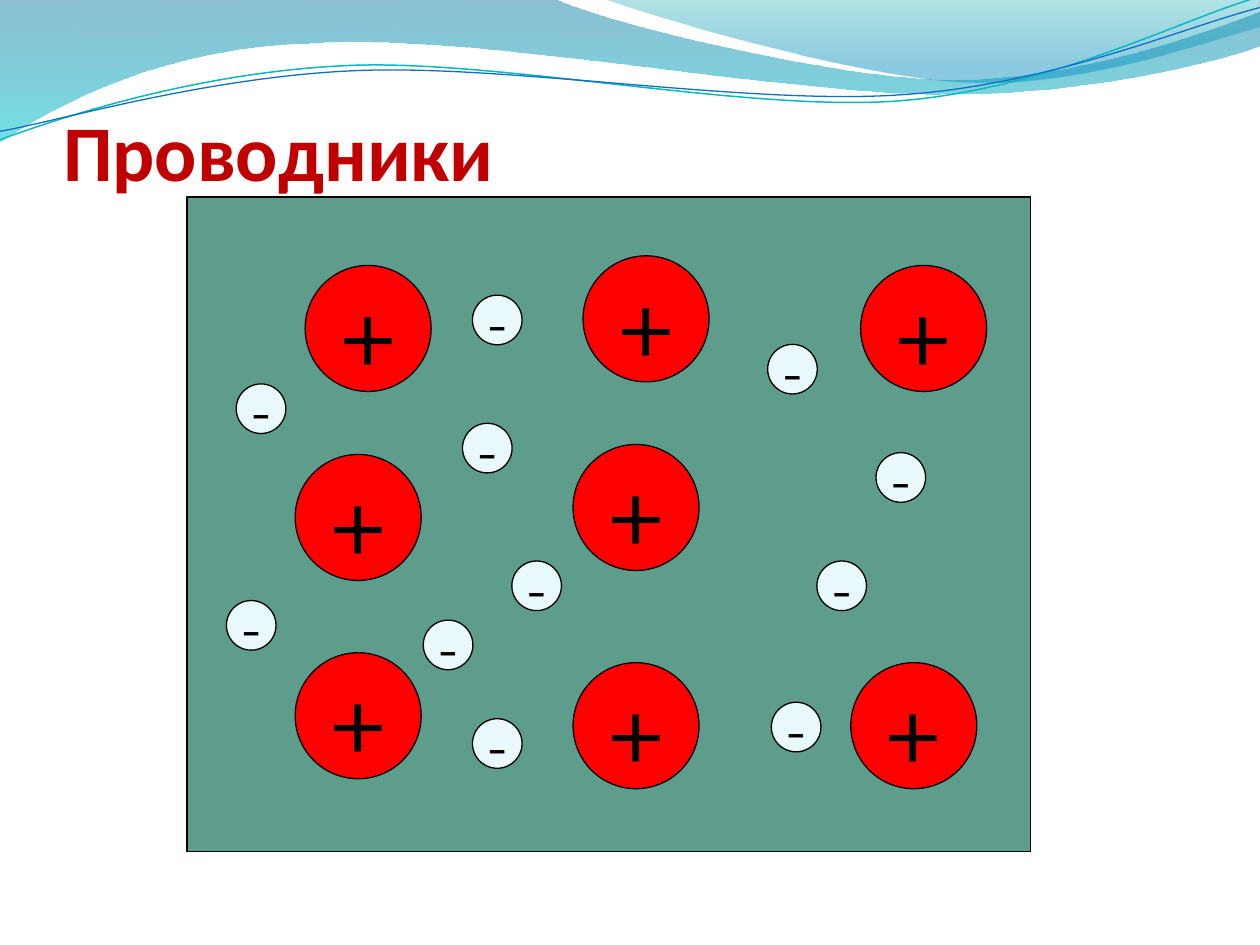
from lxml import etree
from pptx import Presentation
from pptx.dml.color import RGBColor
from pptx.enum import shapes, text
from pptx.oxml.ns import qn
from pptx.util import Pt

BLACK = RGBColor(0x00, 0x00, 0x00)
TITLE_RED = RGBColor(0xC0, 0x00, 0x00)
ION_RED = RGBColor(0xFF, 0x00, 0x00)
ELECTRON_PALE = RGBColor(0xE9, 0xF9, 0xFB)
METAL_GREEN = RGBColor(0x08, 0x68, 0x4E)
DEEP_BLUE = RGBColor(0x00, 0x74, 0xA1)
CYAN = RGBColor(0x00, 0xC6, 0xCF)
TEAL = RGBColor(0x00, 0xA1, 0xA9)
SKY_BLUE = RGBColor(0x00, 0x8B, 0xBF)
LINE_TEAL = RGBColor(0x0A, 0xB8, 0xBF)
LINE_BLUE = RGBColor(0x0F, 0x6F, 0xC6)

CURVE_ROTATION = 357.3
ION_SIZE, ELECTRON_SIZE = 72, 28.35

# Outlines: a pair is a straight step, six numbers are a Bézier step.
WIDE_WAVE = [
    (0, 0), (316.8, -0.7),
    (342.7, 12.2, 478.1, 45.4, 545.8, 45.4),
    (614.2, 45.4, 689.8, 18.7, 720, 6.5), (720.7, 25.9),
    (707.8, 31.7, 626.4, 54.7, 537.1, 54),
    (447.8, 54, 275, 20.2, 185, 24.5),
    (92.9, 25.9, 33.1, 59.8, -0.7, 81.4)]
RIGHT_WAVE = [
    (344.9, -0.7),
    (366.5, 7.9, 491, 44.6, 553.7, 46.8),
    (616.3, 49.7, 691.9, 23, 720, 15.1), (720, 0)]
TEAL_CURVE = [
    (-1.4, 62.9),
    (33.8, 51.7, 114.1, 29.4, 199.8, 29.9),
    (284.9, 30.3, 425.8, 67.3, 512.4, 64.9),
    (599, 62.4, 676.5, 25.7, 720.2, 15.5)]
BLUE_CURVE = [
    (-1.1, 58),
    (32.9, 53.8, 118.3, 32.5, 204.1, 33),
    (290.6, 33.4, 428.9, 63.8, 515.5, 61.4),
    (601.3, 59.6, 678.5, 30.1, 721.4, 21.3)]

IONS = [(333.2, 146.2), (168.7, 259.7), (327.5, 378.7), (491.8, 151.7),
        (486.2, 378.7), (327.5, 254), (168.7, 373), (174.4, 151.7)]
ELECTRONS = [(241.9, 354.4), (292.5, 320.6), (466.8, 320.6), (264.3, 241.9),
             (270, 410.7), (270, 168.7), (440.8, 401.3), (500.6, 258.7),
             (438.7, 196.8), (135, 219.4), (129.4, 343.2)]


def set_opacity(shape, percents):
    """Give the fill colours of a shape their opacities, in order."""
    colors = shape._element.spPr.iter(qn("a:srgbClr"))
    for color, percent in zip(colors, percents):
        alpha = etree.SubElement(color, qn("a:alpha"))
        alpha.set("val", str(percent * 1000))


def bend(shape, steps):
    """Turn the straight segments of a freeform into its Bézier steps."""
    segments = list(shape._element.spPr.iter(qn("a:lnTo")))
    for segment, step in zip(segments, steps):
        if len(step) == 2:
            continue
        segment.tag = qn("a:cubicBezTo")
        for child in list(segment):
            segment.remove(child)
        for x, y in zip(step[::2], step[1::2]):
            point = etree.SubElement(segment, qn("a:pt"))
            point.set("x", str(Pt(x) - shape.left))
            point.set("y", str(Pt(y) - shape.top))


class SlideBuilder:
    title_font = "Calibri"
    sign_font = "Cambria"
    outline_width = 0.75

    def __init__(self, slide):
        self.slide = slide

    def title(self, wording, left, top, width, height):
        title = self.slide.shapes.title
        title.left, title.top = Pt(left), Pt(top)
        title.width, title.height = Pt(width), Pt(height)
        frame = title.text_frame
        frame.text = wording
        frame.auto_size = text.MSO_AUTO_SIZE.NONE
        frame.vertical_anchor = text.MSO_ANCHOR.BOTTOM
        frame.margin_left = frame.margin_right = frame.margin_bottom = 0
        frame.margin_top = Pt(3.6)
        paragraph = frame.paragraphs[0]
        paragraph.alignment = text.PP_ALIGN.LEFT
        self.format_font(paragraph, self.title_font, 45, TITLE_RED)
        paragraph.font.bold = True

    def format_font(self, paragraph, name, size, color):
        paragraph.font.name = name
        paragraph.font.size = Pt(size)
        paragraph.font.color.rgb = color

    def freeform(self, outline, close):
        corners = [(Pt(step[-2]), Pt(step[-1])) for step in outline]
        builder = self.slide.shapes.build_freeform(*corners[0])
        builder.add_line_segments(corners[1:], close=close)
        shape = builder.convert_to_shape()
        bend(shape, outline[1:])
        shape.shadow.inherit = False
        return shape

    def wave(self, outline, stops):
        """Draw a closed area shaded downwards; a stop is (position, colour, opacity)."""
        shape = self.freeform(outline, close=True)
        shape.line.fill.background()
        shape.fill.gradient()
        shape.fill.gradient_angle = 270
        for stop, (position, color, _) in zip(shape.fill.gradient_stops, stops):
            stop.position = position
            stop.color.rgb = color
        set_opacity(shape, [opacity for _, _, opacity in stops])

    def curve(self, outline, color, width):
        shape = self.freeform(outline, close=False)
        shape.rotation = CURVE_ROTATION
        shape.fill.background()
        shape.line.color.rgb = color
        shape.line.width = Pt(width)

    def solid(self, kind, left, top, width, height, color):
        shape = self.slide.shapes.add_shape(
            kind, Pt(left), Pt(top), Pt(width), Pt(height))
        shape.shadow.inherit = False
        shape.fill.solid()
        shape.fill.fore_color.rgb = color
        shape.line.color.rgb = BLACK
        shape.line.width = Pt(self.outline_width)
        return shape

    def panel(self, left, top, width, height, color, opacity):
        panel = self.solid(shapes.MSO_SHAPE.RECTANGLE,
                           left, top, width, height, color)
        set_opacity(panel, [opacity])

    def particle(self, left, top, size, color, sign, sign_size):
        circle = self.solid(shapes.MSO_SHAPE.OVAL, left, top, size, size, color)
        frame = circle.text_frame
        frame.text = sign
        frame.word_wrap = False
        frame.vertical_anchor = text.MSO_ANCHOR.MIDDLE
        paragraph = frame.paragraphs[0]
        paragraph.alignment = text.PP_ALIGN.CENTER
        self.format_font(paragraph, self.sign_font, sign_size, BLACK)


def main():
    presentation = Presentation()
    presentation.slide_width, presentation.slide_height = Pt(720), Pt(540)
    title_only = presentation.slide_layouts[5]
    builder = SlideBuilder(presentation.slides.add_slide(title_only))

    builder.wave(WIDE_WAVE, [(0, DEEP_BLUE, 45), (1, CYAN, 55)])
    builder.wave(RIGHT_WAVE, [(0, TEAL, 30), (0.8, SKY_BLUE, 45)])
    builder.curve(TEAL_CURVE, LINE_TEAL, 0.85)
    builder.curve(BLUE_CURVE, LINE_BLUE, 0.75)

    builder.panel(106.8, 112.5, 482, 374.2, METAL_GREEN, 65)
    builder.title("Проводники", 36, 55.8, 648, 56.9)
    for left, top in IONS:
        builder.particle(left, top, ION_SIZE, ION_RED, "+", 66)
    for left, top in ELECTRONS:
        builder.particle(left, top, ELECTRON_SIZE, ELECTRON_PALE, "-", 36)

    presentation.save("out.pptx")


if __name__ == "__main__":
    main()
